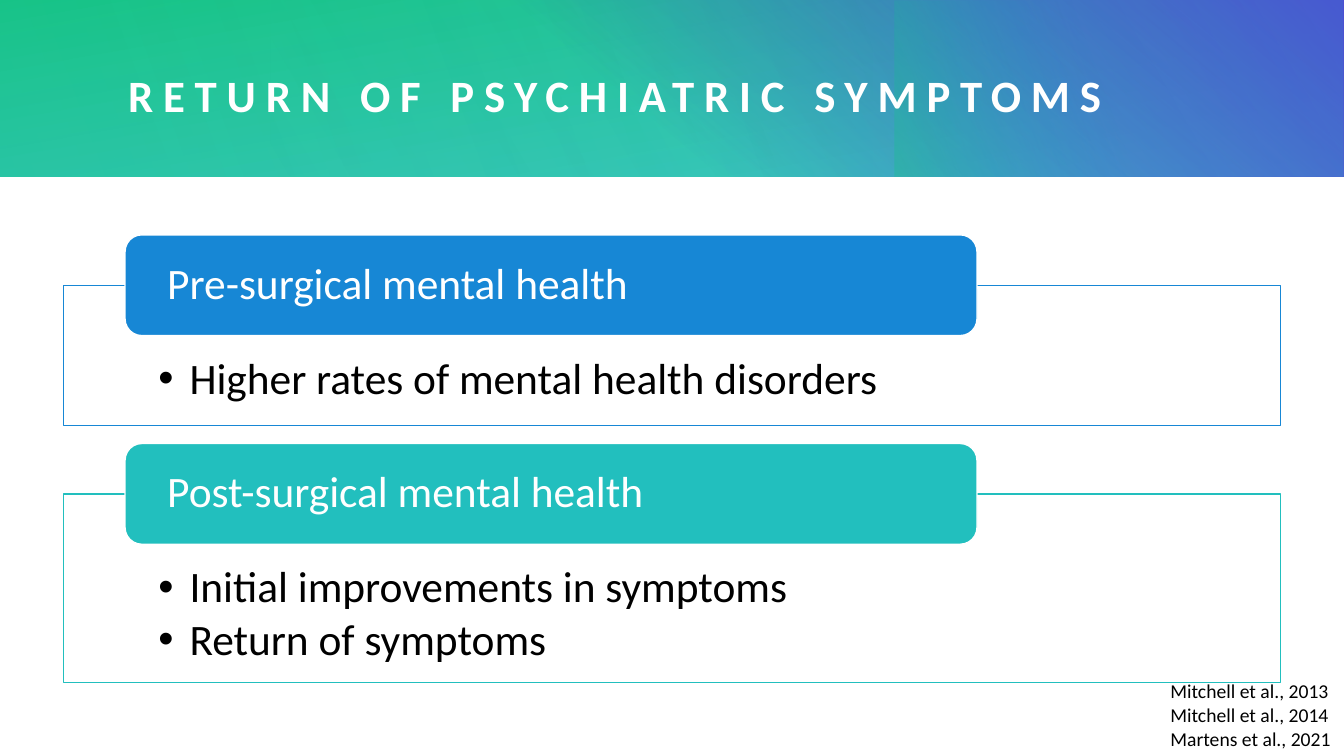
from lxml.etree import SubElement as Sub
from pptx import Presentation
from pptx.dml.color import RGBColor
from pptx.enum.shapes import MSO_SHAPE as Kind
from pptx.enum.text import MSO_ANCHOR as Anchor, PP_ALIGN as Align
from pptx.oxml.ns import qn
from pptx.util import Inches, Pt

WHITE, BLACK = "FFFFFF", "000000"
BLUE, TEAL, GREEN, PURPLE = "1787D5", "22BFBE", "16C67B", "592FD9"


def rgb(code):
    return RGBColor.from_string(code)


class Deck:
    font = "Calibri"

    def __init__(self, width, height):
        self.prs = Presentation()
        self.prs.slide_width = Inches(width)
        self.prs.slide_height = Inches(height)
        self.slide = self.prs.slides.add_slide(self.prs.slide_layouts[5])

    def shape(self, kind, box, fill=None, line=None):
        item = self.slide.shapes.add_shape(kind, *map(Inches, box))
        item.shadow.inherit = False
        if fill:
            item.fill.solid()
            item.fill.fore_color.rgb = rgb(fill)
        if line:
            item.line.color.rgb = rgb(line)
            item.line.width = Pt(1)
        else:
            item.line.fill.background()
        return item

    def blend(self, box, stops, angle, turn=0):
        """Add a bar whose stops are (place, colour, opacity), in percent."""
        bar = self.shape(Kind.RECTANGLE, box)
        bar.rotation = turn
        bar.fill.gradient()
        grad = bar._element.spPr.find(qn("a:gradFill"))
        for part in list(grad):
            grad.remove(part)
        group = Sub(grad, qn("a:gsLst"))
        for place, code, alpha in stops:
            stop = Sub(group, qn("a:gs"), pos=str(place * 1000))
            tint = Sub(stop, qn("a:srgbClr"), val=code)
            Sub(tint, qn("a:alpha"), val=str(alpha * 1000))
        Sub(grad, qn("a:lin"), ang=str(angle * 60000), scaled="0")

    def text(self, item, lines, size, color, pad, anchor=Anchor.TOP,
             bold=False, space=1.0, after=0, bullet=False, track=0):
        frame = item.text_frame
        frame.word_wrap = True
        frame.vertical_anchor = anchor
        (frame.margin_left, frame.margin_top,
         frame.margin_right, frame.margin_bottom) = map(Inches, pad)
        for i, line in enumerate(lines):
            para = frame.add_paragraph() if i else frame.paragraphs[0]
            para.alignment = Align.LEFT
            para.line_spacing = space
            para.space_after = Pt(after)
            if bullet:
                props = para._p.get_or_add_pPr()
                props.set("marL", str(Inches(0.31)))
                props.set("indent", str(-Inches(0.31)))
                Sub(props, qn("a:buFont"), typeface="Arial")
                Sub(props, qn("a:buChar"), char="•")
            run = para.add_run()
            run.text = line
            run.font.name = self.font
            run.font.size = Pt(size)
            run.font.bold = bold
            run.font.color.rgb = rgb(color)
            if track:
                run._r.get_or_add_rPr().set("spc", str(track * 100))

    def title(self, box, text):
        item = self.slide.shapes.title
        item.left, item.top, item.width, item.height = map(Inches, box)
        # Bring the title in front of the banner
        self.slide.shapes._spTree.append(item._element)
        self.text(item, [text], 32, WHITE, (0, 0, 0, 0), Anchor.MIDDLE,
                  bold=True, track=7)

    def panel(self, top, height, color, head, points):
        frame = self.shape(Kind.RECTANGLE, (0.63, top, 12.07, height), WHITE, color)
        self.text(frame, points, 31, BLACK, (0.94, 0.71, 0.94, 0.24),
                  space=0.9, after=4, bullet=True)
        tab = self.shape(Kind.ROUNDED_RECTANGLE, (1.24, top - 0.5, 8.45, 1),
                         color, WHITE)
        self.text(tab, [head], 31, WHITE, (0.37, 0, 0.37, 0), Anchor.MIDDLE,
                  space=0.9)

    def note(self, box, lines):
        item = self.slide.shapes.add_textbox(*map(Inches, box))
        self.text(item, lines, 14, BLACK, (0.1, 0.36, 0.1, 0.05))


def main():
    deck = Deck(13.33, 7.5)

    # Banner: layered gradients
    deck.blend((0, 0, 13.33, 1.75), [(0, TEAL, 83), (100, GREEN, 100)], 260)
    deck.blend((4.81, 0, 8.52, 1.75), [(22, PURPLE, 0), (99, PURPLE, 100)], 310)
    deck.blend((9.87, -0.99, 1.75, 3.74), [(45, BLUE, 0), (99, GREEN, 33)], 250, 270)
    deck.blend((2.68, 0, 10.64, 1.75), [(0, TEAL, 30), (99, TEAL, 0)], 330, 180)
    deck.blend((0, 0, 8.65, 1.75), [(0, TEAL, 21), (99, TEAL, 0)], 340)
    deck.title((1.27, 0.41, 11.35, 1.06), "RETURN OF PSYCHIATRIC SYMPTOMS")

    # Panels: before and after surgery
    deck.panel(2.83, 1.39, BLUE, "Pre-surgical mental health",
               ["Higher rates of mental health disorders"])
    deck.panel(4.9, 1.87, TEAL, "Post-surgical mental health",
               ["Initial improvements in symptoms", "Return of symptoms"])

    # Citations
    deck.note((11.51, 6.38, 2.7, 1.41),
              ["Mitchell et al., 2013", "Mitchell et al., 2014",
               "Martens et al., 2021"])

    deck.prs.save("out.pptx")


if __name__ == "__main__":
    main()
